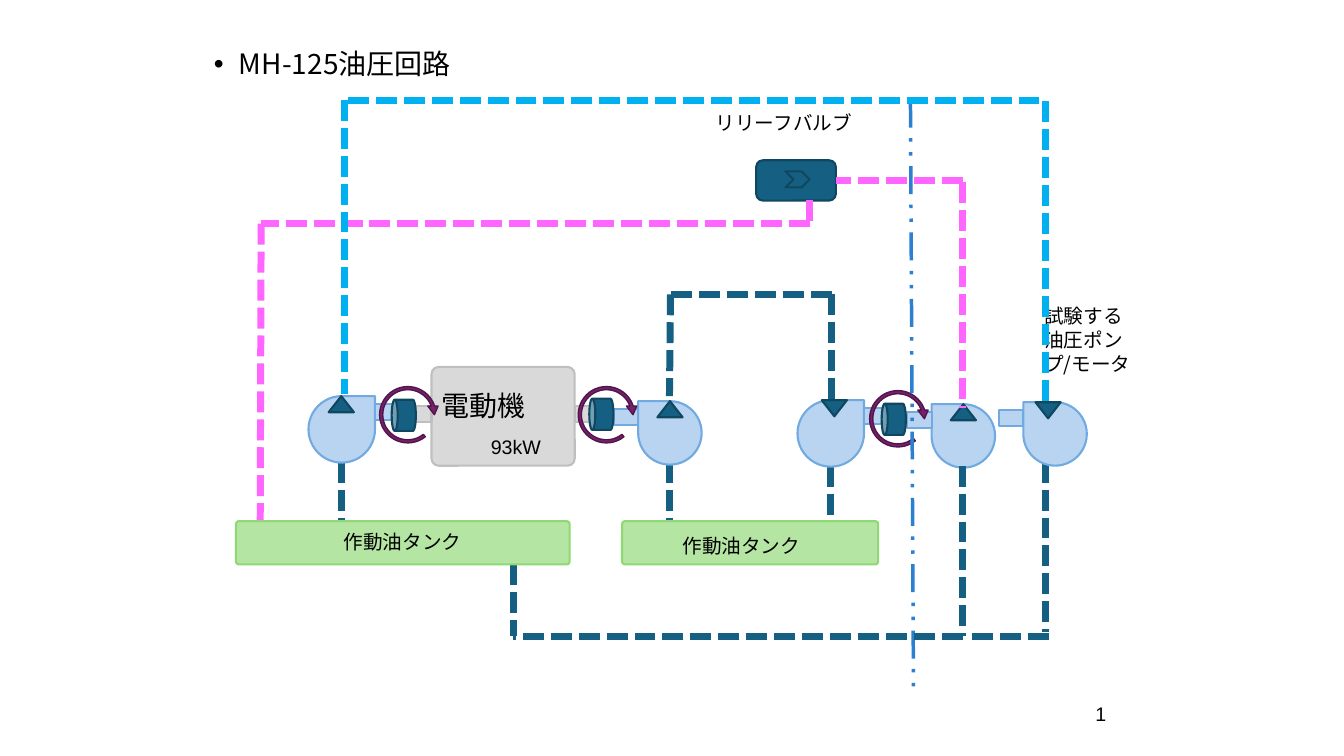
from typing import Any, NamedTuple

from lxml import etree
from pptx import Presentation
from pptx import util as u
from pptx.dml.color import RGBColor
from pptx.enum import dml, shapes, text
from pptx.oxml.ns import qn

PX = 9144  # 100 px to the inch
CJK = "Noto Sans CJK JP"
BLACK = RGBColor(0x00, 0x00, 0x00)
TEAL = RGBColor(0x15, 0x60, 0x82)
PINK = RGBColor(0xFF, 0x66, 0xFF)
CYAN = RGBColor(0x00, 0xB0, 0xF0)
BOUNDARY = RGBColor(0x2D, 0x7F, 0xCF)
ROUNDING = (0.072,)
ARC = (0.049, 11.423, 204.577, 30.937, 0.081)
KIND = shapes.MSO_SHAPE
DASH = dml.MSO_LINE


class Style(NamedTuple):
    fill: RGBColor
    edge: RGBColor
    weight: float = 1.5


class Pump(NamedTuple):
    x: int
    y: int
    size: int
    shaft_left: bool
    port_x: int
    port_down: bool = False


class Coupling(NamedTuple):
    can_x: int
    can_y: int
    arc_x: int
    arc_y: int


class Pipe(NamedTuple):
    x1: int
    y1: int
    x2: int
    y2: int
    color: RGBColor


class Label(NamedTuple):
    lines: list[str]
    x: int
    y: int
    w: int
    h: int
    fmt: dict[str, Any] = {}


TEAL_STYLE = Style(TEAL, RGBColor(0x10, 0x47, 0x60))
PUMP_STYLE = Style(RGBColor(0xB8, 0xD4, 0xF0), RGBColor(0x71, 0xAA, 0xE0))
GREY_STYLE = Style(RGBColor(0xD9, 0xD9, 0xD9), RGBColor(0xBF, 0xBF, 0xBF))
GREEN_STYLE = Style(RGBColor(0xB4, 0xE5, 0xA2), RGBColor(0x8E, 0xD9, 0x73))
ARC_STYLE = Style(RGBColor(0x78, 0x20, 0x6E), RGBColor(0x50, 0x16, 0x49), 1)

PUMPS = [
    Pump(306, 393, 66, False, 326), Pump(633, 398, 63, True, 652),
    Pump(791, 397, 66, False, 815, True), Pump(924, 401, 63, True, 943),
    Pump(1015, 399, 63, True, 1027, True),
]
COUPLINGS = [Coupling(385, 400, 373, 380), Coupling(581, 399, 570, 380),
             Coupling(871, 404, 859, 384)]
TANKS = [(234, 517, 331, 43), (617, 517, 254, 43)]
BACK_PIPES = [
    Pipe(1037, 458, 1037, 627, TEAL), Pipe(339, 458, 339, 522, TEAL),
    Pipe(825, 292, 825, 401, TEAL), Pipe(664, 458, 664, 522, TEAL),
    Pipe(665, 292, 664, 393, TEAL), Pipe(803, 222, 259, 222, PINK),
    Pipe(259, 222, 258, 553, PINK), Pipe(509, 560, 509, 631, TEAL),
    Pipe(825, 292, 665, 292, TEAL), Pipe(824, 462, 824, 514, TEAL),
]
FRONT_PIPES = [
    Pipe(955, 631, 509, 631, TEAL), Pipe(955, 462, 955, 631, TEAL),
    Pipe(955, 181, 955, 405, PINK), Pipe(803, 198, 803, 222, PINK),
    Pipe(342, 99, 342, 391, CYAN), Pipe(1031, 100, 339, 100, CYAN),
    Pipe(1037, 100, 1037, 398, CYAN), Pipe(1040, 631, 959, 631, TEAL),
]
LABELS = [
    Label(["電動機"], 428, 381, 150, 44, {"size": 20}),
    Label(["93kW"], 477, 427, 70, 34, {"font": "Arial", "wrap": False}),
    Label(["リリーフバルブ"], 700, 105, 157, 34),
    Label(["試験する", "油圧ポンプ/モータ"], 1026, 297, 130, 81),
    Label(["作動油タンク"], 331, 521, 147, 34, {"font": "Arial Narrow"}),
    Label(["作動油タンク"], 667, 525, 155, 34, {"font": "Arial Narrow"}),
    Label(["1"], 899, 683, 208, 50, {
        "font": "Arial", "align": text.PP_ALIGN.RIGHT,
        "anchor": text.MSO_ANCHOR.MIDDLE}),
]


def write(tf: Any, lines: list[str], *, font: str = CJK, size: int = 14,
          wrap: bool = True, align: Any = text.PP_ALIGN.LEFT,
          anchor: Any = text.MSO_ANCHOR.TOP) -> None:
    tf.word_wrap, tf.vertical_anchor = wrap, anchor
    tf.auto_size = text.MSO_AUTO_SIZE.NONE
    for i, line in enumerate(lines):
        p = tf.add_paragraph() if i else tf.paragraphs[0]
        p.alignment = align
        r = p.add_run()
        r.text = line
        r.font.name, r.font.size = font, u.Pt(size)
        r.font.color.rgb = BLACK
        etree.SubElement(r.font._element, qn("a:ea")).set("typeface", CJK)


def add_part(parent: Any, kind: Any, x: int, y: int, w: int, h: int,
             style: Style, *, rotation: int = 0, flip: bool = False,
             adj: tuple[float, ...] = ()) -> Any:
    sp = parent.shapes.add_shape(kind, *(v * PX for v in (x, y, w, h)))
    sp.shadow.inherit = False
    sp.fill.solid()
    sp.fill.fore_color.rgb = style.fill
    sp.line.color.rgb = style.edge
    sp.line.width = u.Pt(style.weight)
    sp.rotation = rotation
    for i, value in enumerate(adj):
        sp.adjustments[i] = value
    if flip:
        sp._element.spPr.find(qn("a:xfrm")).set("flipH", "1")
    return sp


def add_pipe(s: Any, pipe: Pipe, *, weight: float = 5,
             dash: Any = DASH.SQUARE_DOT) -> Any:
    ends = (v * PX for v in pipe[:4])
    line = s.shapes.add_connector(shapes.MSO_CONNECTOR.STRAIGHT, *ends)
    line.line.color.rgb = pipe.color
    line.line.width = u.Pt(weight)
    line.line.dash_style = dash
    etree.SubElement(line._element.spPr, qn("a:effectLst"))
    return line


def add_pump(s: Any, pump: Pump) -> None:
    group = s.shapes.add_group_shape()
    x, y, size = pump.x, pump.y, pump.size
    add_part(group, KIND.TEAR, x, y, size, size, PUMP_STYLE,
             flip=pump.shaft_left)
    shaft_x = x - 24 if pump.shaft_left else x + size
    add_part(group, KIND.RECTANGLE, shaft_x, y + 8, 24, 16, PUMP_STYLE)
    add_part(group, KIND.ISOSCELES_TRIANGLE, pump.port_x, y, 25, 16,
             TEAL_STYLE, rotation=180 if pump.port_down else 0)


def main() -> None:
    prs = Presentation()
    prs.slide_width, prs.slide_height = 1333 * PX, 750 * PX
    s = prs.slides.add_slide(prs.slide_layouts[5])
    # Bulleted heading
    sp = s.shapes.title
    sp.left, sp.top, sp.width, sp.height = 202 * PX, 45 * PX, 323 * PX, 43 * PX
    write(sp.text_frame, ["MH-125油圧回路"], size=20)
    p = sp.text_frame.paragraphs[0]
    p.line_spacing, p.space_before = 0.9, u.Pt(10)
    pPr = p._p.get_or_add_pPr()
    pPr.set("marL", str(25 * PX))
    pPr.set("indent", str(-25 * PX))
    etree.SubElement(pPr, qn("a:buFont")).set("typeface", "Arial")
    etree.SubElement(pPr, qn("a:buChar")).set("char", "•")
    for pipe in BACK_PIPES:
        add_pipe(s, pipe)
    # Motor with a shaft on each side
    motor = s.shapes.add_group_shape()
    add_part(motor, KIND.ROUNDED_RECTANGLE, 428, 364, 142, 98, GREY_STYLE,
             adj=ROUNDING)
    for x in (404, 570):
        add_part(motor, KIND.RECTANGLE, x, 403, 24, 16, GREY_STYLE)
    # Pumps, couplings, tanks and labels
    for pump in PUMPS:
        add_pump(s, pump)
    for c in COUPLINGS:
        add_part(s, KIND.CAN, c.can_x, c.can_y, 31, 24, TEAL_STYLE, rotation=270)
        add_part(s, KIND.CIRCULAR_ARROW, c.arc_x, c.arc_y, 63, 63, ARC_STYLE, adj=ARC)
    for tank in TANKS:
        add_part(s, KIND.ROUNDED_RECTANGLE, *tank, GREEN_STYLE, adj=ROUNDING)
    for label in LABELS:
        box = s.shapes.add_textbox(*(v * PX for v in label[1:5]))
        write(box.text_frame, label.lines, **label.fmt)
    # Boundary of the test side
    add_pipe(s, Pipe(903, 99, 906, 683, BOUNDARY), weight=2.5, dash=DASH.DASH_DOT_DOT)
    # Relief valve and its inlet
    valve = add_part(s, KIND.ROUNDED_RECTANGLE, 750, 159, 79, 40, TEAL_STYLE)
    add_part(s, KIND.CHEVRON, 779, 170, 24, 16, TEAL_STYLE)
    add_pipe(s, Pipe(955, 179, 829, 179, PINK)).end_connect(valve, 3)
    for pipe in FRONT_PIPES:
        add_pipe(s, pipe)
    prs.save("out.pptx")


if __name__ == "__main__":
    main()
